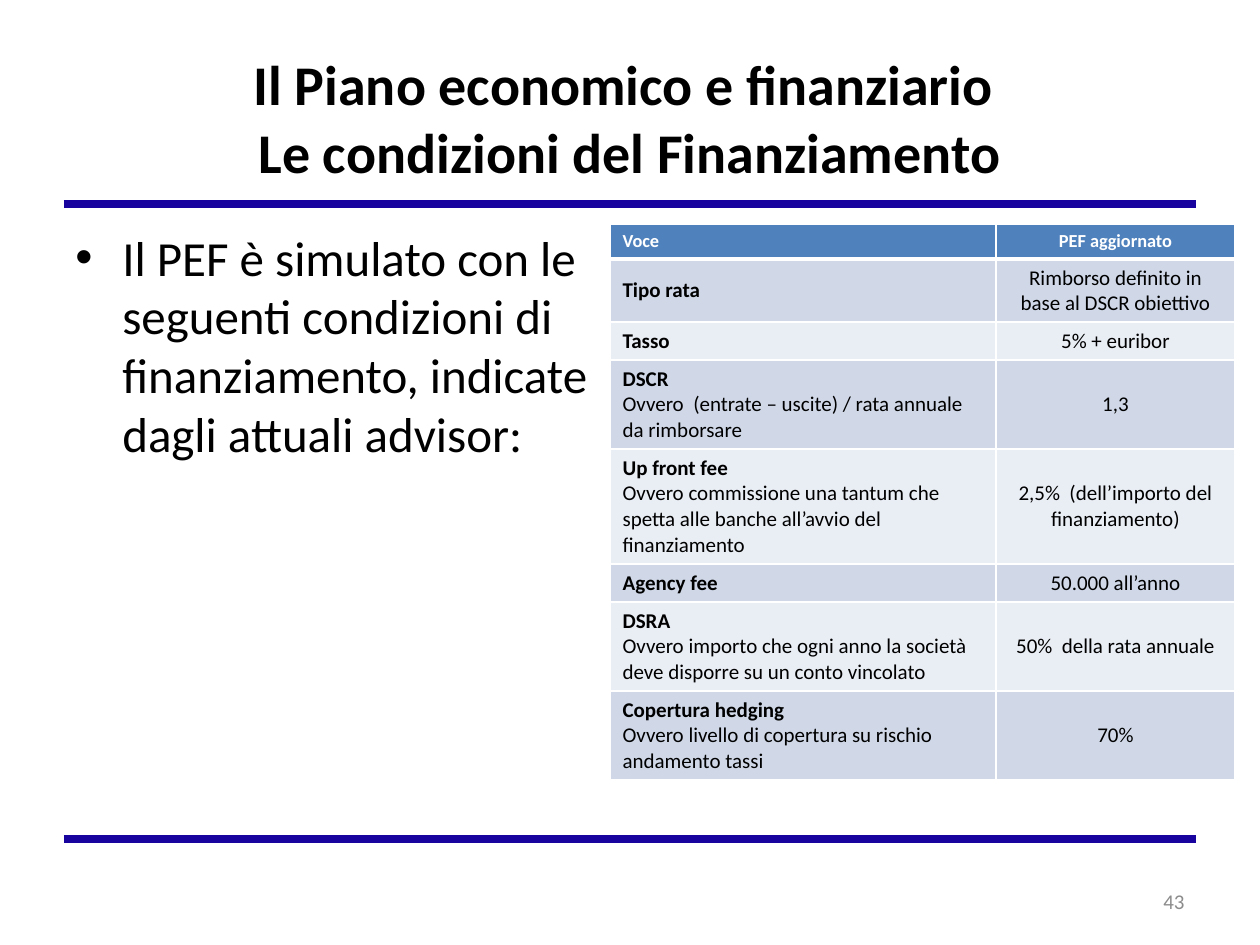
from typing import NamedTuple

from lxml import etree
from pptx import Presentation
from pptx.dml.color import RGBColor
from pptx.enum.shapes import MSO_CONNECTOR
from pptx.enum.text import MSO_ANCHOR, PP_ALIGN
from pptx.oxml.ns import qn
from pptx.util import Emu, Pt

LEFT, CENTER, RIGHT = PP_ALIGN.LEFT, PP_ALIGN.CENTER, PP_ALIGN.RIGHT
TOP, MIDDLE = MSO_ANCHOR.TOP, MSO_ANCHOR.MIDDLE
STRAIGHT = MSO_CONNECTOR.STRAIGHT

FONT = "Calibri"
BLACK, WHITE, GREY = "000000", "FFFFFF", "8C8C8C"
RULE_COLOR, HEADER_FILL = "19039F", "4F81BD"
BAND_FILLS = ("D0D8E8", "E9EDF4")
EMU_PER_PX = 914400 // 126


class Rect(NamedTuple):
    left: int
    top: int
    width: int
    height: int


class Condition(NamedTuple):
    height: int
    name: str
    note: str
    value: str


COLUMN_WIDTHS = (386, 239)
HEADER = Condition(35, "Voce", "", "PEF aggiornato")
CONDITIONS = (
    Condition(62, "Tipo rata", "", "Rimborso definito in base al DSCR obiettivo"),
    Condition(38, "Tasso", "", "5% + euribor"),
    Condition(89, "DSCR", "Ovvero  (entrate – uscite) / rata annuale da rimborsare", "1,3"),
    Condition(115, "Up front fee",
              "Ovvero commissione una tantum che spetta alle banche all’avvio del finanziamento",
              "2,5%  (dell’importo del finanziamento)"),
    Condition(38, "Agency fee", "", "50.000 all’anno"),
    Condition(89, "DSRA",
              "Ovvero importo che ogni anno la società deve disporre su un conto vincolato",
              "50%  della rata annuale"),
    Condition(89, "Copertura hedging",
              "Ovvero livello di copertura su rischio andamento tassi", "70%"),
)


def px(length: int) -> Emu:
    return Emu(length * EMU_PER_PX)


def rgb(color: str) -> RGBColor:
    return RGBColor.from_string(color)


def write(para, text: str, *, size: float, color: str = BLACK,
          bold: bool = False, align=LEFT) -> None:
    para.text = text
    para.alignment = align
    for span in para.runs:
        span.font.name = FONT
        span.font.size = Pt(size)
        span.font.bold = bold
        span.font.color.rgb = rgb(color)


def add_text(slide, rect: Rect, text: str, *, anchor=MIDDLE, **style):
    box = slide.shapes.add_textbox(*map(px, rect))
    frame = box.text_frame
    frame.word_wrap = True
    frame.vertical_anchor = anchor
    para = frame.paragraphs[0]
    write(para, text, **style)
    return para


def add_bullet(para, indent: int) -> None:
    properties = para._p.get_or_add_pPr()
    properties.set("marL", str(px(indent)))
    properties.set("indent", str(-px(indent)))
    etree.SubElement(properties, qn("a:buFont"), typeface="Arial")
    etree.SubElement(properties, qn("a:buChar"), char="•")


def add_rule(slide, y: int) -> None:
    rule = slide.shapes.add_connector(STRAIGHT, px(64), px(y), px(1196), px(y))
    rule.line.color.rgb = rgb(RULE_COLOR)
    rule.line.width = Pt(4.25)
    etree.SubElement(rule._element.spPr, qn("a:effectLst"))


def set_borders(cell, top: int, bottom: int) -> None:
    """Draw white cell borders; top and bottom widths are in points."""
    properties = cell._tc.get_or_add_tcPr()
    widths = {"a:lnL": 1, "a:lnR": 1, "a:lnT": top, "a:lnB": bottom}
    for position, (tag, width) in enumerate(widths.items()):
        line = etree.Element(qn(tag), w=str(Pt(width)))
        fill = etree.SubElement(line, qn("a:solidFill"))
        etree.SubElement(fill, qn("a:srgbClr"), val=WHITE)
        properties.insert(position, line)


def fill_row(table, index: int, row: Condition) -> None:
    is_header = index == 0
    style = {"size": 10.5 if is_header else 12, "color": WHITE if is_header else BLACK}
    table.rows[index].height = px(row.height)
    name_cell, value_cell = table.rows[index].cells
    write(name_cell.text_frame.paragraphs[0], row.name, bold=True, **style)
    if row.note:
        write(name_cell.text_frame.add_paragraph(), row.note, **style)
    write(value_cell.text_frame.paragraphs[0], row.value,
          bold=is_header, align=CENTER, **style)
    for cell in (name_cell, value_cell):
        cell.vertical_anchor = TOP if is_header else MIDDLE
        cell.fill.solid()
        cell.fill.fore_color.rgb = rgb(HEADER_FILL if is_header else BAND_FILLS[(index - 1) % 2])
        set_borders(cell, top=3 if index == 1 else 1, bottom=3 if is_header else 1)


def add_conditions_table(slide, left: int, top: int) -> None:
    rows = (HEADER, *CONDITIONS)
    rect = Rect(left, top, sum(COLUMN_WIDTHS), sum(row.height for row in rows))
    table = slide.shapes.add_table(len(rows), len(COLUMN_WIDTHS), *map(px, rect)).table
    for column, width in zip(table.columns, COLUMN_WIDTHS):
        column.width = px(width)
    for index, row in enumerate(rows):
        fill_row(table, index, row)


def main() -> None:
    deck = Presentation()
    deck.slide_width, deck.slide_height = px(1260), px(945)
    slide = deck.slides.add_slide(deck.slide_layouts[6])
    for y in (204, 839):
        add_rule(slide, y)
    add_text(slide, Rect(63, 38, 1134, 158),
             "Il Piano economico e finanziario \vLe condizioni del Finanziamento",
             size=32, bold=True, align=CENTER)
    body = add_text(slide, Rect(63, 221, 557, 609),
                    "Il PEF è simulato con le seguenti condizioni di finanziamento, "
                    "indicate dagli attuali advisor:", size=28, anchor=TOP)
    add_bullet(body, 47)
    add_text(slide, Rect(903, 876, 294, 50), "43", size=12, color=GREY, align=RIGHT)
    add_conditions_table(slide, 610, 224)
    deck.save("out.pptx")


if __name__ == "__main__":
    main()
